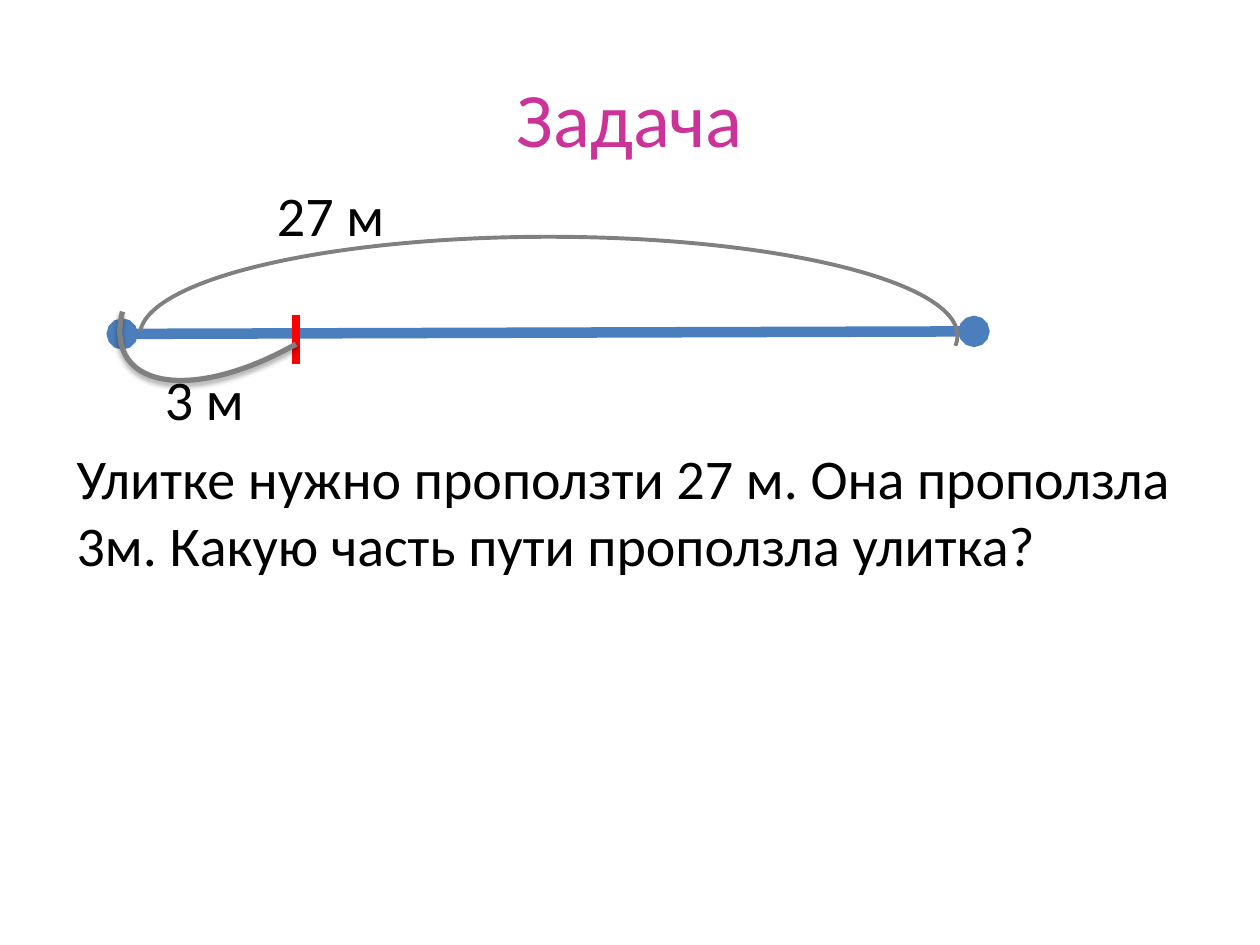
from dataclasses import dataclass

from lxml.etree import SubElement
from pptx import Presentation
from pptx.dml.color import RGBColor
from pptx.enum.shapes import MSO_CONNECTOR, MSO_SHAPE
from pptx.enum.text import MSO_ANCHOR, PP_ALIGN
from pptx.oxml.ns import qn
from pptx.util import Inches, Pt


@dataclass(frozen=True)
class Theme:
    font: str = "Calibri"
    title_size: int = 44
    body_size: int = 32
    title_color: str = "CC3399"
    text_color: str = "000000"
    path_color: str = "4B7EBC"
    mark_color: str = "FF0000"
    arc_color: str = "808080"
    shadow_color: str = "000000"


class SlideBuilder:
    def __init__(self, slide, theme):
        self.slide = slide
        self.theme = theme

    def text(self, words, left, top, width, height, size=None, color=None,
             align=PP_ALIGN.LEFT, anchor=MSO_ANCHOR.TOP):
        box = self.slide.shapes.add_textbox(
            Inches(left), Inches(top), Inches(width), Inches(height))
        frame = box.text_frame
        frame.word_wrap = True
        frame.vertical_anchor = anchor
        frame.text = words
        para = frame.paragraphs[0]
        para.alignment = align
        font = para.runs[0].font
        font.name = self.theme.font
        font.size = Pt(size or self.theme.body_size)
        font.color.rgb = RGBColor.from_string(color or self.theme.text_color)

    def line(self, start, end, color, weight, oval_ends=False):
        connector = self.slide.shapes.add_connector(
            MSO_CONNECTOR.STRAIGHT, *map(Inches, start + end))
        connector.line.color.rgb = RGBColor.from_string(color)
        connector.line.width = Pt(weight)
        SubElement(connector._element.spPr, qn("a:effectLst"))
        if oval_ends:
            outline = connector.line._get_or_add_ln()
            for tag in ("a:headEnd", "a:tailEnd"):
                SubElement(outline, qn(tag), type="oval")

    def arc(self, left, top, width, height, angles, weight, rotation=0):
        """Draw an arc between two angles, given in degrees clockwise."""
        arc = self.slide.shapes.add_shape(
            MSO_SHAPE.ARC, Inches(left), Inches(top), Inches(width), Inches(height))
        for index, angle in enumerate(angles):
            arc.adjustments[index] = angle * 0.6
        arc.rotation = rotation
        arc.fill.background()
        arc.line.color.rgb = RGBColor.from_string(self.theme.arc_color)
        arc.line.width = Pt(weight)
        arc.shadow.inherit = False
        return arc

    def drop_shadow(self, shape):
        effects = shape._element.spPr.find(qn("a:effectLst"))
        shadow = SubElement(effects, qn("a:outerShdw"), blurRad=str(Pt(3.1)),
                            dist=str(Pt(1.8)), dir="5400000", rotWithShape="0")
        color = SubElement(shadow, qn("a:srgbClr"), val=self.theme.shadow_color)
        SubElement(color, qn("a:alpha"), val="35000")


def main():
    deck = Presentation()
    deck.slide_width, deck.slide_height = Inches(10), Inches(7.5)
    theme = Theme()
    builder = SlideBuilder(deck.slides.add_slide(deck.slide_layouts[6]), theme)

    builder.text("Задача", 0.5, 0.3, 9, 1.25, theme.title_size, theme.title_color,
                 PP_ALIGN.CENTER, MSO_ANCHOR.MIDDLE)
    builder.text("27 м", 2.1, 1.38, 1.3, 0.64)
    builder.text("3 м", 1.21, 2.84, 1.3, 0.64)
    builder.text("Улитке нужно проползти 27 м. Она проползла 3м. "
                 "Какую часть пути проползла улитка?", 0.51, 3.47, 9.21, 1.2)

    builder.line((0.97, 2.65), (7.73, 2.63), theme.path_color, 6, oval_ends=True)
    builder.line((2.35, 2.5), (2.35, 2.89), theme.mark_color, 4.5)
    builder.arc(1.11, 1.88, 6.49, 1.57, (180.67, 1.42), 2.25)
    crawled_arc = builder.arc(0.75, 1.33, 2.9, 1.37, (293.36, 14.66), 3, 144.9)
    builder.drop_shadow(crawled_arc)

    deck.save("out.pptx")


if __name__ == "__main__":
    main()
